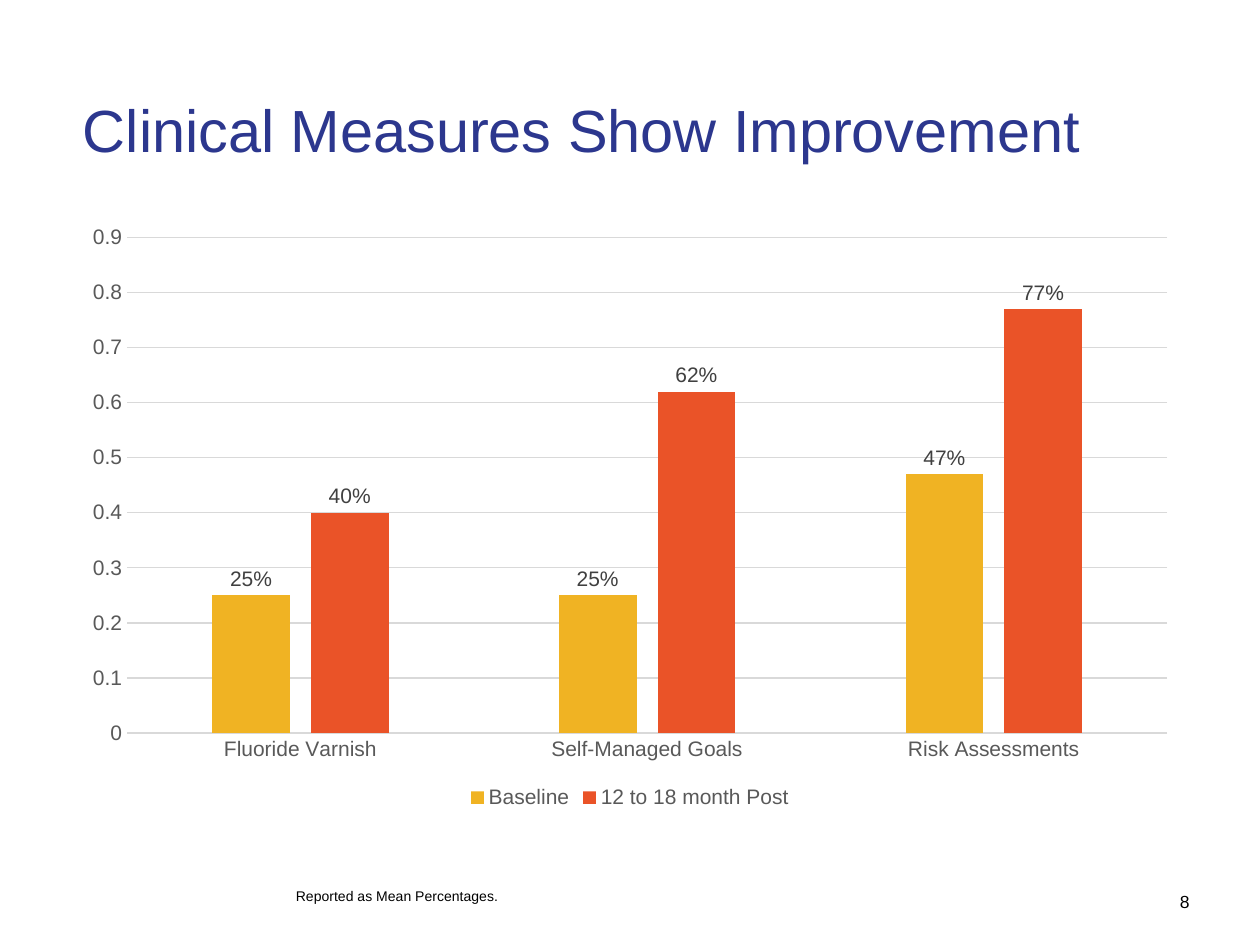
import pptx
import pptx.chart.data
import pptx.dml.color
import pptx.enum.chart
import pptx.enum.text
import pptx.util

FONT = "Arial"
LEFT, WIDTH = 40.3, 639.4
COLORS = {
    "title": "2C378E",
    "text": "000000",
    "axis": "595959",
    "label": "404040",
    "grid": "D9D9D9",
    "baseline": "F0B323",
    "post": "EA5328",
}
MEASURES = ["Fluoride Varnish", "Self-Managed Goals", "Risk Assessments"]
SERIES = [
    ("Baseline", [0.25, 0.25, 0.47], "baseline"),
    ("12 to 18 month Post", [0.4, 0.62, 0.77], "post"),
]


class SlideBuilder:
    def __init__(self, page):
        self.page = page

    def color(self, name):
        return pptx.dml.color.RGBColor.from_string(COLORS[name])

    def style_font(self, font, size, color):
        font.name = FONT
        font.size = pptx.util.Pt(size)
        font.bold = False
        font.color.rgb = self.color(color)

    def style_line(self, line, color):
        line.color.rgb = self.color(color)
        line.width = pptx.util.Pt(0.75)

    def text(self, bounds, wording, size, color="text", anchor="TOP",
             align="LEFT", spacing=1.0, insets=(7.2, 3.6)):
        box = self.page.shapes.add_textbox(*map(pptx.util.Pt, bounds))
        frame = box.text_frame
        frame.word_wrap = True
        frame.vertical_anchor = pptx.enum.text.MSO_ANCHOR[anchor]
        frame.margin_left = frame.margin_right = pptx.util.Pt(insets[0])
        frame.margin_top = frame.margin_bottom = pptx.util.Pt(insets[1])
        para = frame.paragraphs[0]
        para.text = wording
        para.alignment = pptx.enum.text.PP_ALIGN[align]
        para.line_spacing = spacing
        self.style_font(para.font, size, color)

    def column_chart(self, bounds, categories, series_rows):
        data = pptx.chart.data.CategoryChartData()
        data.categories = categories
        for name, values, _ in series_rows:
            data.add_series(name, values)
        chart = self.page.shapes.add_chart(
            pptx.enum.chart.XL_CHART_TYPE.COLUMN_CLUSTERED,
            *map(pptx.util.Pt, bounds), data).chart
        self.style_font(chart.font, 10, "text")
        chart.has_title = False

        chart.has_legend = True
        chart.legend.position = pptx.enum.chart.XL_LEGEND_POSITION.BOTTOM
        chart.legend.include_in_layout = False
        self.style_font(chart.legend.font, 12, "axis")

        for axis in (chart.category_axis, chart.value_axis):
            axis.major_tick_mark = pptx.enum.chart.XL_TICK_MARK.NONE
            axis.minor_tick_mark = pptx.enum.chart.XL_TICK_MARK.NONE
            self.style_font(axis.tick_labels.font, 12, "axis")
        self.style_line(chart.category_axis.format.line, "grid")
        value_axis = chart.value_axis
        value_axis.minimum_scale = 0
        value_axis.maximum_scale = 0.9
        value_axis.major_unit = 0.1
        value_axis.format.line.fill.background()
        self.style_line(value_axis.major_gridlines.format.line, "grid")

        plot = chart.plots[0]
        plot.gap_width = 219
        plot.overlap = -27
        plot.vary_by_categories = False
        for series, (_, _, color) in zip(plot.series, series_rows):
            series.format.fill.solid()
            series.format.fill.fore_color.rgb = self.color(color)
            labels = series.data_labels
            labels.show_value = True
            labels.number_format = "0%"
            labels.number_format_is_linked = False
            labels.position = pptx.enum.chart.XL_LABEL_POSITION.OUTSIDE_END
            self.style_font(labels.font, 12, "label")


def main():
    deck = pptx.Presentation()
    deck.slide_width = pptx.util.Pt(720)
    deck.slide_height = pptx.util.Pt(540)
    builder = SlideBuilder(deck.slides.add_slide(deck.slide_layouts[6]))
    builder.text((648.7, 509, 31, 12.2), "8", 10, align="RIGHT", insets=(0, 0))
    builder.text((LEFT, 38.2, WIDTH, 76.3), "Clinical Measures Show Improvement",
                 34, color="title", anchor="MIDDLE", spacing=0.9)
    builder.text((162, 492.5, 475.2, 28), "Reported as Mean Percentages.", 8,
                 anchor="BOTTOM", spacing=1.1)
    builder.column_chart((LEFT, 122.4, WIDTH, 342.7), MEASURES, SERIES)
    deck.save("out.pptx")


if __name__ == "__main__":
    main()
